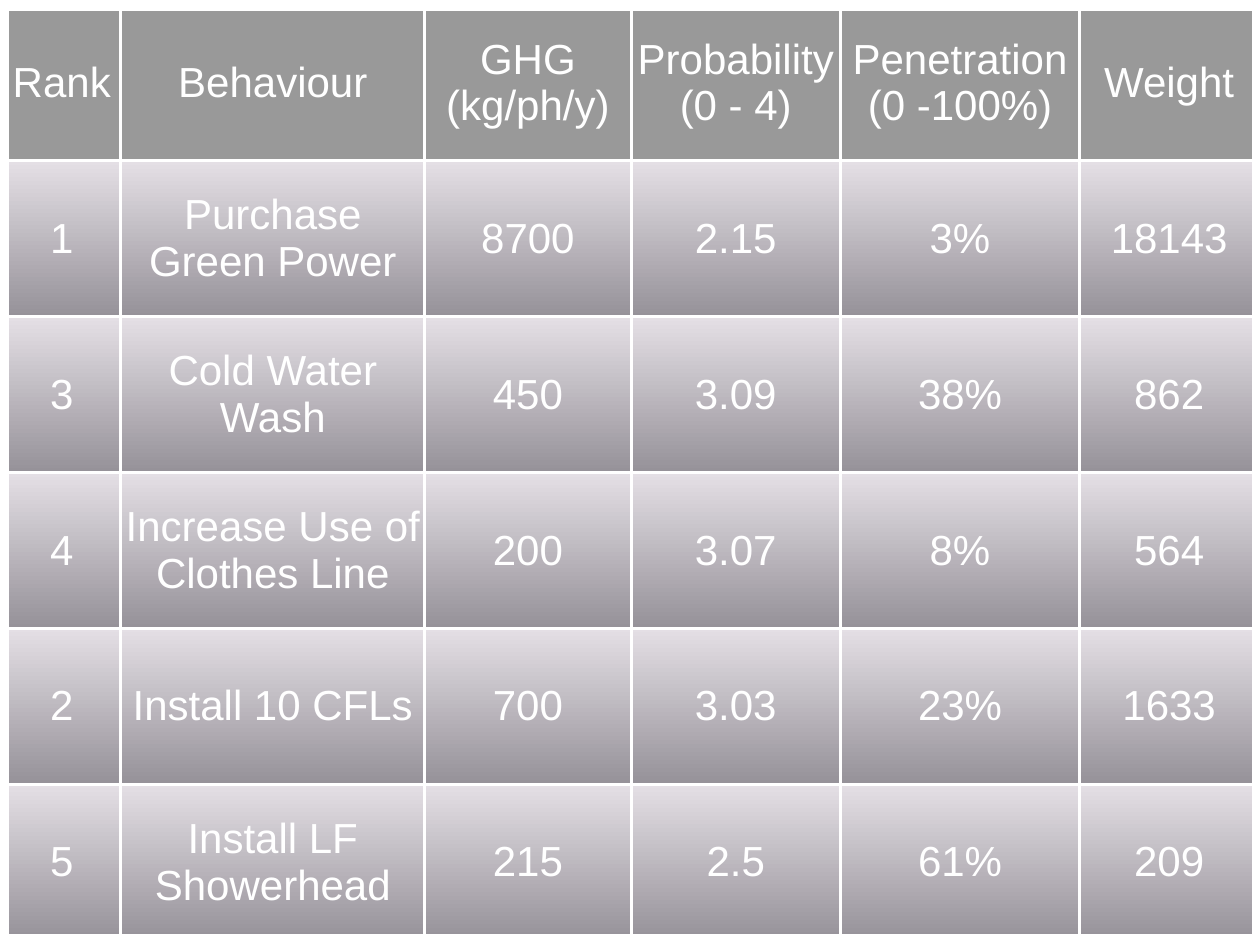
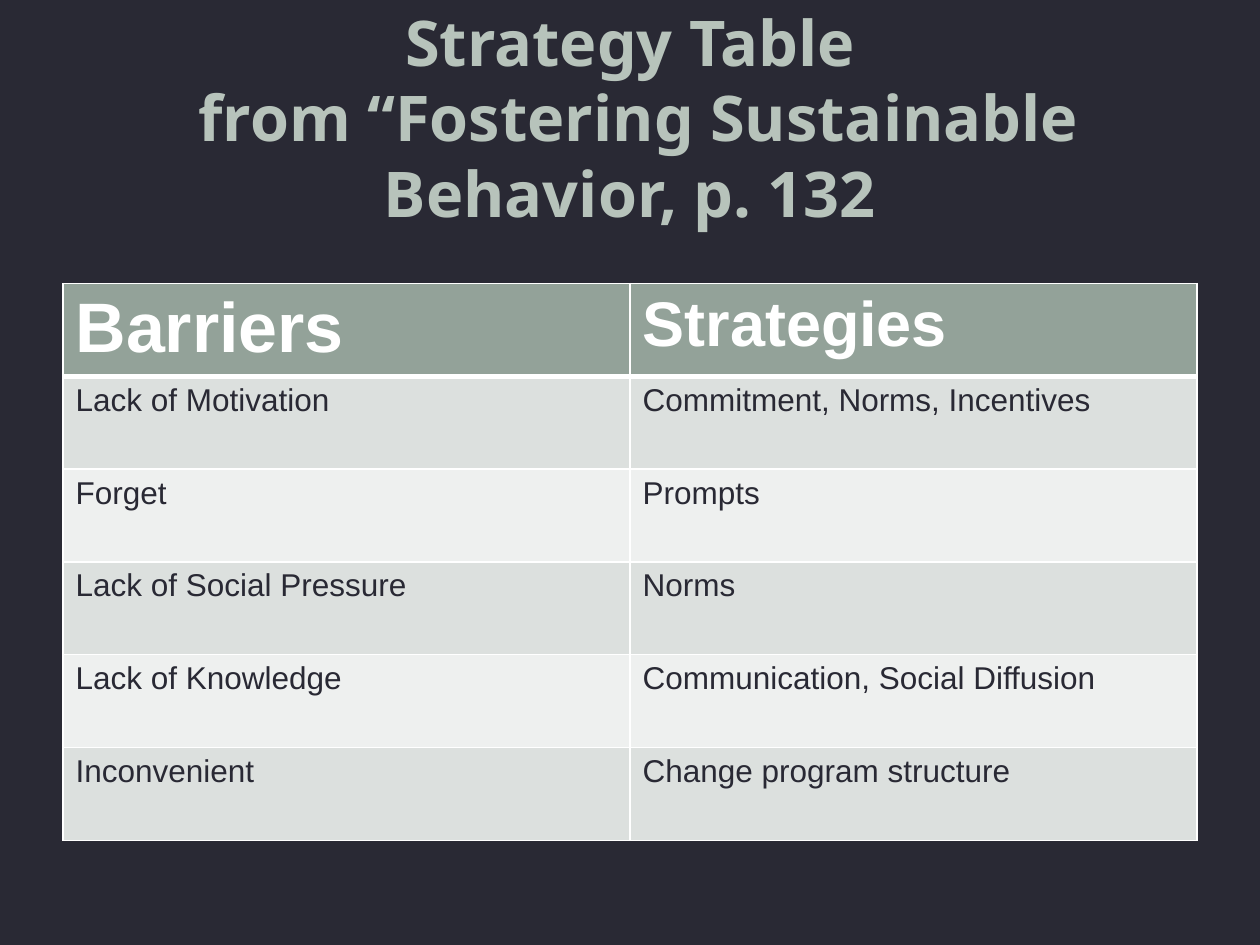
from lxml import etree
from pptx import Presentation
from pptx.dml.color import RGBColor
from pptx.enum.text import MSO_ANCHOR as Anchor, MSO_AUTO_SIZE as AutoSize, PP_ALIGN as Align
from pptx.oxml.ns import qn
from pptx.util import Inches, Pt

TITLE_ONLY, BLANK = 5, 6
BACKGROUND = "292934"
WHITE = "FFFFFF"
TITLE_GREEN = "B7C3BB"
HEADER_GREEN = "93A299"
HEADER_GREY = "999999"
GRADIENT = ("E4DFE5", "969299")
BANDS = ("DCE0DE", "EEF0EF")
TABLE_FONT, TITLE_FONT = "Arial", "Noto Sans"

BEHAVIOURS = [
    ("Rank", "Behaviour", "GHG\n(kg/ph/y)", "Probability\n(0 - 4)",
     "Penetration\n(0 -100%)", "Weight"),
    ("1", "Purchase Green Power", "8700", "2.15", "3%", "18143"),
    ("3", "Cold Water Wash", "450", "3.09", "38%", "862"),
    ("4", "Increase Use of Clothes Line", "200", "3.07", "8%", "564"),
    ("2", "Install 10 CFLs", "700", "3.03", "23%", "1633"),
    ("5", "Install LF Showerhead", "215", "2.5", "61%", "209"),
]
STRATEGIES = [
    ("Barriers", "Strategies"),
    ("Lack of Motivation", "Commitment, Norms, Incentives"),
    ("Forget", "Prompts"),
    ("Lack of Social Pressure", "Norms"),
    ("Lack of Knowledge", "Communication, Social Diffusion"),
    ("Inconvenient", "Change program structure"),
]


def rgb(hex_color):
    return RGBColor.from_string(hex_color)


def style_text(frame, font_name, size, color, bold=False, align=Align.LEFT):
    for paragraph in frame.paragraphs:
        paragraph.alignment = align
        for run in paragraph.runs:
            font = run.font
            font.name, font.size, font.bold = font_name, Pt(size), bold
            font.color.rgb = rgb(color)


def fill_solid(fill, color):
    fill.solid()
    fill.fore_color.rgb = rgb(color)


def fill_gradient(fill, colors):
    """Fill from the first colour at the top to the second at the bottom."""
    fill.gradient()
    fill.gradient_angle = 270
    for stop, position, color in zip(fill.gradient_stops, (0, 1), colors):
        stop.position = position
        stop.color.rgb = rgb(color)


def set_borders(cell, left, top, right, bottom):
    """Draw white borders of the given widths in points."""
    properties = cell._tc.get_or_add_tcPr()
    widths = {"a:lnL": left, "a:lnR": right, "a:lnT": top, "a:lnB": bottom}
    for index, (tag, width) in enumerate(widths.items()):
        line = etree.Element(qn(tag), w=str(Pt(width)))
        solid = etree.SubElement(line, qn("a:solidFill"))
        etree.SubElement(solid, qn("a:srgbClr"), val=WHITE)
        properties.insert(index, line)


def add_grid(slide, rows, box, column_widths):
    """Add a table with equal rows in box and return it with its text set."""
    left, top, width, height = map(Inches, box)
    table = slide.shapes.add_table(
        len(rows), len(rows[0]), left, top, width, height).table
    for column, column_width in zip(table.columns, column_widths):
        column.width = Inches(column_width)
    for r, texts in enumerate(rows):
        table.rows[r].height = Inches(box[3] / len(rows))
        for c, text in enumerate(texts):
            table.cell(r, c).text_frame.text = text
    return table


def add_behaviour_table(slide, box):
    table = add_grid(slide, BEHAVIOURS, box, (0.94, 2.41, 1.64, 1.66, 1.9, 1.42))
    last_row, last_column = len(table.rows) - 1, len(table.columns) - 1
    inner, outer = 2, 8
    for r, row in enumerate(table.rows):
        for c, cell in enumerate(row.cells):
            cell.vertical_anchor = Anchor.MIDDLE
            cell.margin_left = cell.margin_right = Inches(0.03)
            cell.margin_top = cell.margin_bottom = Inches(0.03)
            style_text(cell.text_frame, TABLE_FONT, 24, WHITE, align=Align.CENTER)
            if r == 0:
                fill_solid(cell.fill, HEADER_GREY)
            else:
                fill_gradient(cell.fill, GRADIENT)
            at_edges = (c == 0, r == 0, c == last_column, r == last_row)
            set_borders(cell, *(outer if edge else inner for edge in at_edges))


def add_strategy_table(slide, box):
    table = add_grid(slide, STRATEGIES, box, [box[2] / 2] * 2)
    thin, rule = 1, 3
    for r, row in enumerate(table.rows):
        for c, cell in enumerate(row.cells):
            if r == 0:
                style_text(cell.text_frame, TABLE_FONT, (40, 36)[c], WHITE, bold=True)
                fill_solid(cell.fill, HEADER_GREEN)
            else:
                style_text(cell.text_frame, TABLE_FONT, 18, BACKGROUND)
                fill_solid(cell.fill, BANDS[(r - 1) % 2])
            set_borders(cell, thin, rule if r == 1 else thin,
                        thin, rule if r == 0 else thin)


def set_title(slide, text, box):
    title = slide.shapes.title
    title.left, title.top, title.width, title.height = map(Inches, box)
    frame = title.text_frame
    frame.text = text
    frame.word_wrap = True
    frame.auto_size = AutoSize.NONE
    frame.vertical_anchor = Anchor.MIDDLE
    style_text(frame, TITLE_FONT, 36, TITLE_GREEN, bold=True, align=Align.CENTER)


def main():
    prs = Presentation()
    prs.slide_width, prs.slide_height = Inches(10), Inches(7.5)
    fill_solid(prs.slide_master.background.fill, BACKGROUND)

    ranking = prs.slides.add_slide(prs.slide_layouts[BLANK])
    add_behaviour_table(ranking, (0.02, 0.04, 9.97, 7.42))

    strategy = prs.slides.add_slide(prs.slide_layouts[TITLE_ONLY])
    set_title(strategy,
              "Strategy Table\v from “Fostering Sustainable Behavior, p. 132",
              (0.5, 0.3, 9, 1.25))
    add_strategy_table(strategy, (0.5, 2.25, 9, 4.42))

    prs.save("out.pptx")


if __name__ == "__main__":
    main()
